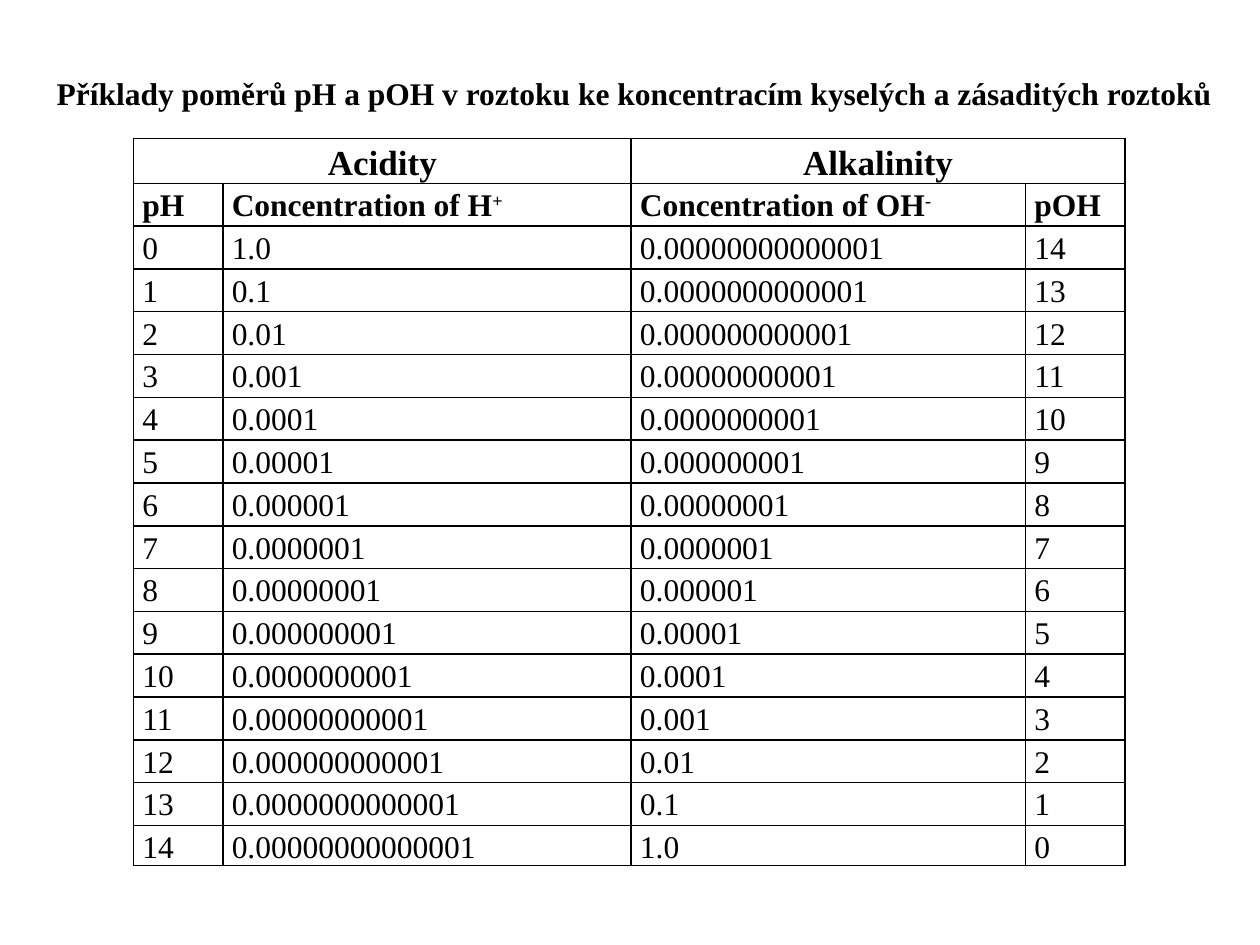
from lxml.etree import SubElement
from pptx import Presentation
from pptx.dml.color import RGBColor
from pptx.enum.text import MSO_ANCHOR as Anchor, MSO_AUTO_SIZE as AutoSize, PP_ALIGN as Align
from pptx.oxml.ns import qn
from pptx.util import Inches, Pt

COLORS = {"ink": "000000", "paper": "FFFFFF"}
FONT = "Times New Roman"
MAX_PH = 14


class SlideBuilder:
    """Holds the text style and the slide being filled."""

    def __init__(self, slide):
        self.slide = slide

    def style(self, paragraph, size, bold=False, align=Align.LEFT):
        paragraph.alignment = align
        font = paragraph.font
        font.name, font.size, font.bold = FONT, Pt(size), bold
        font.color.rgb = RGBColor.from_string(COLORS["ink"])

    def title(self, text, left, top, width, height):
        heading = self.slide.shapes.title
        heading.left, heading.top = Inches(left), Inches(top)
        heading.width, heading.height = Inches(width), Inches(height)
        frame = heading.text_frame
        frame.text = text
        frame.word_wrap = True
        frame.auto_size = AutoSize.NONE
        frame.vertical_anchor = Anchor.TOP
        frame.margin_top = Inches(0.07)
        self.style(frame.paragraphs[0], 18, bold=True)

    def table(self, left, top, widths, heights):
        table = self.slide.shapes.add_table(
            len(heights), len(widths), Inches(left), Inches(top),
            Inches(sum(widths)), Inches(sum(heights))).table
        table.first_row = table.horz_banding = False
        for column, width in zip(table.columns, widths):
            column.width = Inches(width)
        for row, height in zip(table.rows, heights):
            row.height = Inches(height)
        for cell in table.iter_cells():
            self.border(cell)
            cell.fill.solid()
            cell.fill.fore_color.rgb = RGBColor.from_string(COLORS["paper"])
        return table

    def border(self, cell):
        properties = cell._tc.get_or_add_tcPr()
        for side in ("a:lnL", "a:lnR", "a:lnT", "a:lnB"):
            line = SubElement(properties, qn(side), w=str(Pt(1)))
            fill = SubElement(line, qn("a:solidFill"))
            SubElement(fill, qn("a:srgbClr"), val=COLORS["ink"])

    def cell(self, cell, text, size=18, bold=False, align=Align.JUSTIFY, superscript=""):
        cell.margin_left = cell.margin_right = Inches(0.07)
        cell.margin_top = cell.margin_bottom = 0
        paragraph = cell.text_frame.paragraphs[0]
        paragraph.line_spacing = 1.15
        self.style(paragraph, size, bold, align)
        paragraph.add_run().text = text
        if superscript:
            charge = paragraph.add_run()
            charge.text = superscript
            charge.font._element.set("baseline", "30000")


def concentration(exponent):
    return f"{10 ** -exponent:.{max(exponent, 1)}f}"


def main():
    prs = Presentation()
    prs.slide_width, prs.slide_height = Inches(10), Inches(7.5)
    builder = SlideBuilder(prs.slides.add_slide(prs.slide_layouts[5]))

    # Title
    builder.title("Příklady poměrů pH a pOH v\u00a0roztoku ke koncentracím "
                  "kyselých a zásaditých roztoků", 0.35, 0.52, 9.53, 0.71)

    # Empty grid: two header rows and one row for each pH
    scale = builder.table(1.06, 1.1, [0.71, 3.24, 3.13, 0.79],
                          [0.34] * (MAX_PH + 2) + [0.27])

    # Group headings over two columns each
    for column, group in ((0, "Acidity"), (2, "Alkalinity")):
        scale.cell(0, column).merge(scale.cell(0, column + 1))
        builder.cell(scale.cell(0, column), group, 20, True, Align.CENTER)

    # Column headings with ion charges
    headings = (("pH", ""), ("Concentration of H", "+"),
                ("Concentration of OH", "-"), ("pOH", ""))
    for column, (heading, charge) in enumerate(headings):
        builder.cell(scale.cell(1, column), heading, bold=True, superscript=charge)

    # pH and pOH always add up to 14
    for ph in range(MAX_PH + 1):
        poh = MAX_PH - ph
        values = (str(ph), concentration(ph), concentration(poh), str(poh))
        for column, value in enumerate(values):
            builder.cell(scale.cell(ph + 2, column), value)

    prs.save("out.pptx")


if __name__ == "__main__":
    main()
